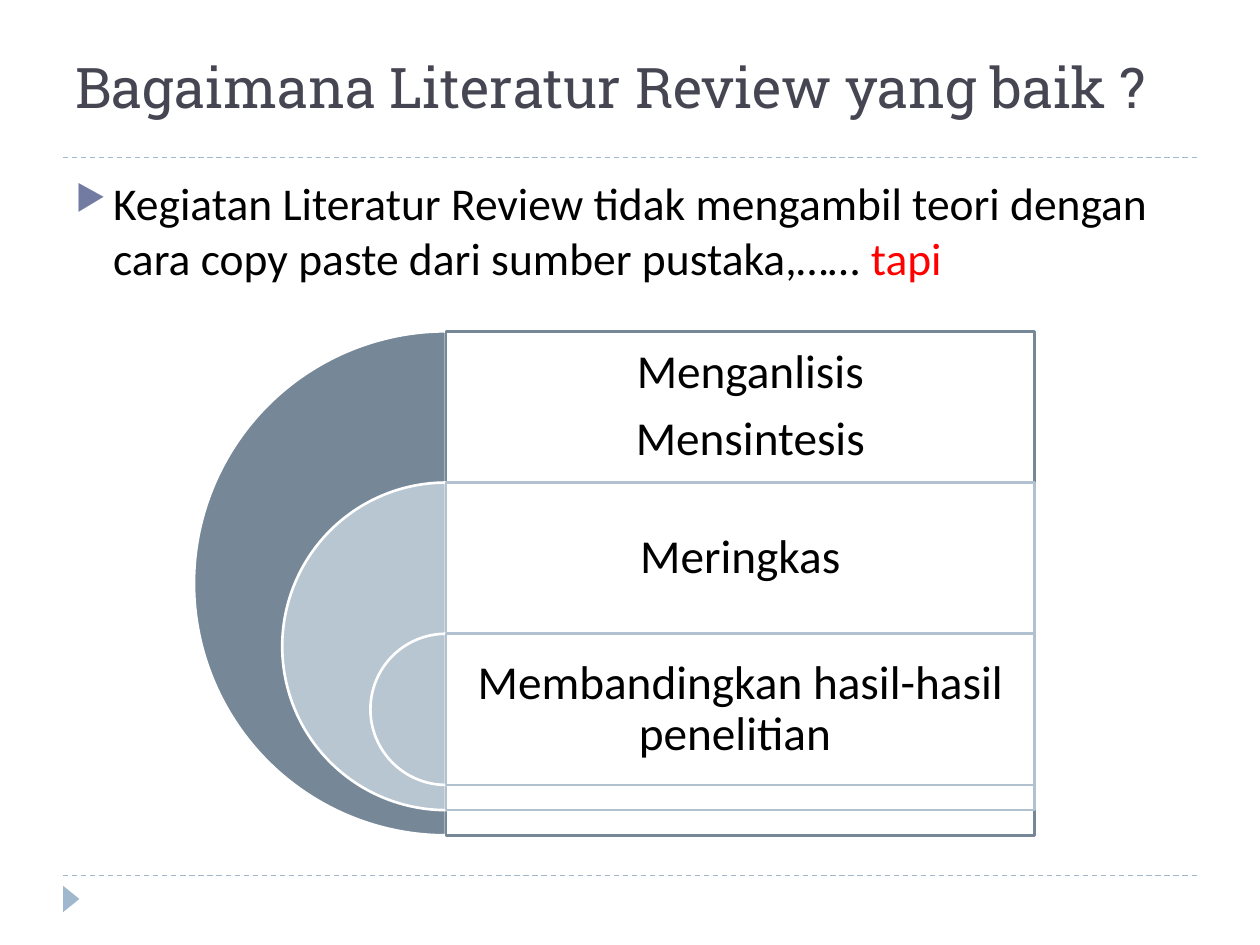
from lxml.etree import SubElement
from pptx import Presentation
from pptx.dml.color import RGBColor
from pptx.enum.dml import MSO_LINE
from pptx.enum.shapes import MSO_CONNECTOR, MSO_SHAPE
from pptx.enum.text import MSO_ANCHOR, PP_ALIGN
from pptx.oxml.ns import qn
from pptx.util import Inches, Pt

WHITE = RGBColor(0xFF, 0xFF, 0xFF)
BLACK = RGBColor(0, 0, 0)
RED = RGBColor(0xFF, 0, 0)
INK = RGBColor(0x46, 0x46, 0x53)
SKY = RGBColor(0x9F, 0xB8, 0xCD)
INDIGO = RGBColor(0x72, 0x7C, 0xA3)
SLATE = RGBColor(0x76, 0x88, 0x98)
MIST = RGBColor(0xB8, 0xC6, 0xD2)
EDGE = RGBColor(0xB2, 0xC1, 0xCF)

MID = 3.54
TOP = 2.63
WIDTH = 4.67
STEP = 1.2
LEVELS = [
    (4, SLATE, SLATE, ["Menganlisis", "Mensintesis"], 0.16),
    (2.6, MIST, EDGE, ["Meringkas"], 0),
    (1.2, MIST, EDGE, ["Membandingkan hasil-hasil penelitian "], 0),
]


def add_rule(slide, y):
    rule = slide.shapes.add_connector(
        MSO_CONNECTOR.STRAIGHT, Inches(0.5), Inches(y), Inches(9.5), Inches(y))
    rule.line.color.rgb = SKY
    rule.line.width = Pt(0.75)
    rule.line.dash_style = MSO_LINE.DASH
    SubElement(rule._element.spPr, qn("a:effectLst"))


def add_form(shapes, kind, x, y, w, h, fill, line=None):
    form = shapes.add_shape(kind, Inches(x), Inches(y), Inches(w), Inches(h))
    form.shadow.inherit = False
    form.fill.solid()
    form.fill.fore_color.rgb = fill
    if line is None:
        form.line.fill.background()
    else:
        form.line.color.rgb = line
        form.line.width = Pt(1.5)
    return form


def add_frame(shapes, x, y, w, h, anchor):
    box = shapes.add_textbox(Inches(x), Inches(y), Inches(w), Inches(h))
    frame = box.text_frame
    frame.word_wrap = True
    frame.vertical_anchor = anchor
    return frame


def add_run(para, text, size, color, font="Calibri"):
    run = para.add_run()
    run.text = text
    run.font.size = Pt(size)
    run.font.name = font
    run.font.color.rgb = color


def set_indent(para, left, first=0):
    props = para._p.get_or_add_pPr()
    props.set("marL", str(Inches(left)))
    props.set("indent", str(Inches(first)))
    return props


def add_bullet(para):
    props = set_indent(para, 0.3, -0.3)
    color = SubElement(props, qn("a:buClr"))
    SubElement(color, qn("a:srgbClr"), val=str(INDIGO))
    SubElement(props, qn("a:buSzPct"), val="76000")
    SubElement(props, qn("a:buChar"), char="▶")


def add_title(slide):
    frame = add_frame(slide.shapes, 0.5, 0.17, 9, 0.83, MSO_ANCHOR.BOTTOM)
    add_run(frame.paragraphs[0], "Bagaimana Literatur Review yang baik ?",
            32, INK, "Roboto Slab")


def add_body(slide):
    frame = add_frame(slide.shapes, 0.5, 1.34, 9, 1.1, MSO_ANCHOR.TOP)
    para = frame.paragraphs[0]
    para.space_before = Pt(6)
    add_bullet(para)
    add_run(para, "Kegiatan Literatur Review tidak mengambil teori dengan "
            "cara copy paste dari sumber pustaka,…… ", 26, BLACK)
    add_run(para, "tapi", 26, RED)


def add_level(shapes, y, size, fill, edge, lines, indent):
    pie = add_form(shapes, MSO_SHAPE.PIE, MID - size / 2, y, size, size, fill, WHITE)
    pie.adjustments[0] = 54
    pie.adjustments[1] = 162
    panel = add_form(shapes, MSO_SHAPE.RECTANGLE, MID, y, WIDTH, size, WHITE, edge)
    tint = panel._element.spPr.find(qn("a:solidFill"))[0]
    SubElement(tint, qn("a:alpha"), val="90000")

    frame = add_frame(shapes, MID, y, WIDTH, STEP, MSO_ANCHOR.MIDDLE)
    frame.margin_left = frame.margin_right = Inches(0.11)
    frame.margin_top = frame.margin_bottom = Inches(0.11)
    for i, line in enumerate(lines):
        para = frame.add_paragraph() if i else frame.paragraphs[0]
        para.alignment = PP_ALIGN.CENTER
        para.line_spacing = 0.9
        para.space_after = Pt(9)
        set_indent(para, indent)
        add_run(para, line, 27, BLACK)


def main():
    deck = Presentation()
    deck.slide_width = Inches(10)
    deck.slide_height = Inches(7.5)
    slide = deck.slides.add_slide(deck.slide_layouts[6])
    for y in (6.95, 1.25):
        add_rule(slide, y)
    mark = add_form(slide.shapes, MSO_SHAPE.ISOSCELES_TRIANGLE,
                    0.46, 7.07, 0.21, 0.13, SKY)
    mark.rotation = 90
    add_body(slide)
    add_title(slide)
    group = slide.shapes.add_group_shape()
    for i, level in enumerate(LEVELS):
        add_level(group.shapes, TOP + i * STEP, *level)
    deck.save("out.pptx")


if __name__ == "__main__":
    main()
